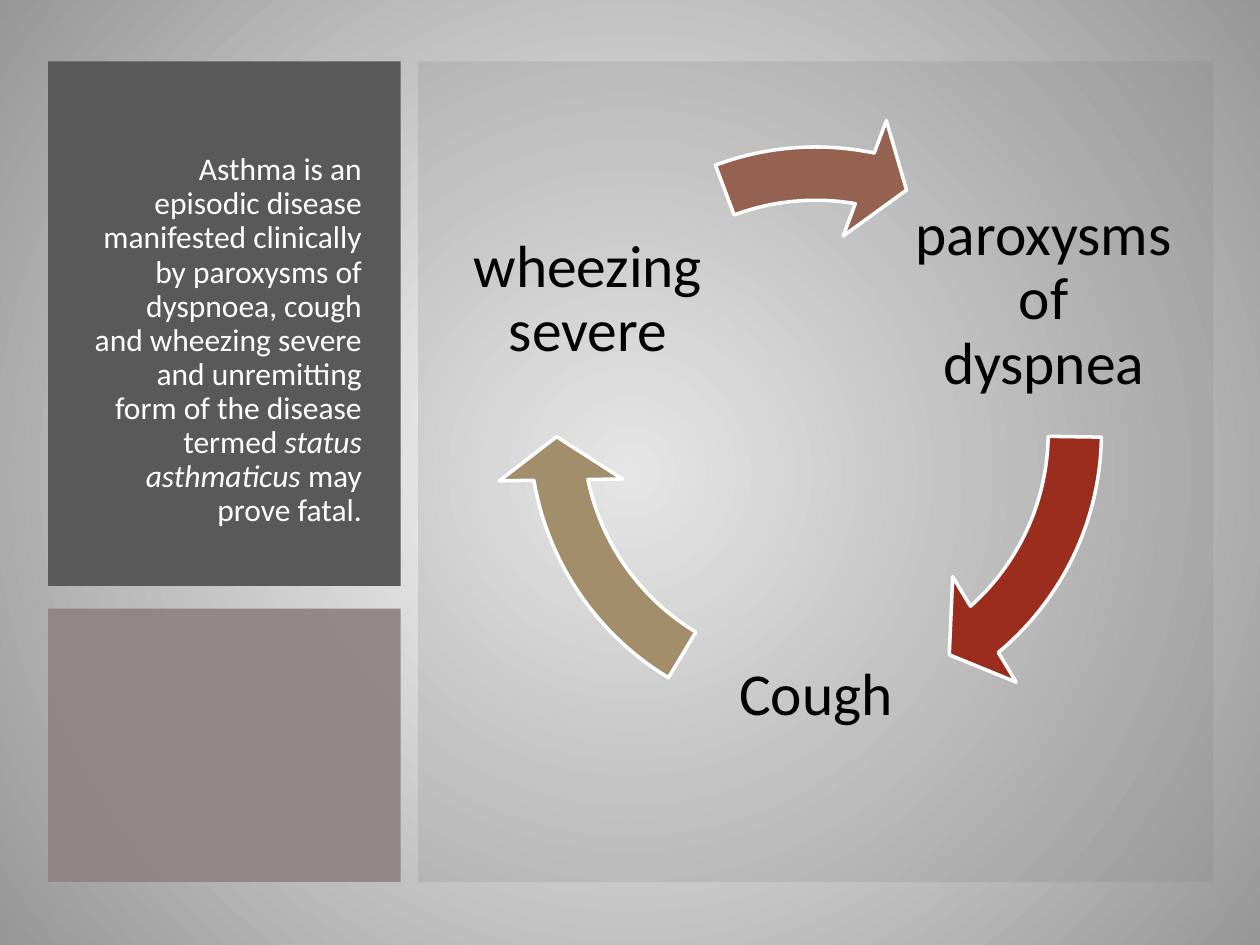
from dataclasses import dataclass

from lxml.etree import SubElement
from pptx import Presentation
from pptx.dml.color import RGBColor
from pptx.enum.shapes import MSO_SHAPE
from pptx.enum.text import MSO_ANCHOR, MSO_AUTO_SIZE, PP_ALIGN
from pptx.oxml import parse_xml
from pptx.oxml.ns import nsdecls, qn
from pptx.util import Cm, Pt


@dataclass(frozen=True)
class Theme:
    """Colours, font and type sizes of the slide."""

    font: str = "Calibri"
    white: str = "FFFFFF"
    black: str = "000000"
    edge: str = "979797"
    dark: str = "595959"
    mauve: str = "918485"
    gray: str = "808080"
    red: str = "9B2D1F"
    tan: str = "A28E6A"
    brown: str = "956251"
    title: int = 18
    label: int = 34


class Deck:
    """Holds the theme and the current slide and draws on it."""

    def __init__(self, theme):
        """Start a deck with one title-only slide."""
        self.theme = theme
        self.show = Presentation()
        self.show.slide_width, self.show.slide_height = Cm(25.4), Cm(19.05)
        self.slide = self.show.slides.add_slide(self.show.slide_layouts[5])

    def glow(self, inner, outer):
        """Fill the background with a round gradient."""
        fill = self.slide.background.fill
        fill.gradient()
        for stop, tint, place in zip(fill.gradient_stops, (inner, outer), (0, 1)):
            stop.color.rgb = RGBColor.from_string(tint)
            stop.position = place
        grad = self.slide.element.find(".//" + qn("a:gradFill"))
        grad.replace(grad.find(qn("a:lin")), parse_xml(
            f'<a:path {nsdecls("a")} path="circle">'
            '<a:fillToRect l="50000" t="50000" r="50000" b="50000"/></a:path>'))

    def style(self, font, size, tint):
        """Set face, size and colour of a font."""
        font.name, font.size = self.theme.font, Pt(size)
        font.color.rgb = RGBColor.from_string(tint)

    def paint(self, shape, tint):
        """Give a shape a flat fill and no shadow."""
        shape.shadow.inherit = False
        shape.fill.solid()
        shape.fill.fore_color.rgb = RGBColor.from_string(tint)

    def panel(self, box, tint, alpha=100):
        """Draw a borderless rectangle."""
        shape = self.slide.shapes.add_shape(MSO_SHAPE.RECTANGLE, *map(Cm, box))
        self.paint(shape, tint)
        shape.line.fill.background()
        if alpha < 100:
            color = shape.element.spPr.find(".//" + qn("a:srgbClr"))
            SubElement(color, qn("a:alpha"), val=str(alpha * 1000))

    def title(self, box, parts):
        """Place the title above the panels, from text and italic pairs."""
        shape = self.slide.shapes.title
        self.slide.shapes.element.append(shape.element)
        shape.left, shape.top, shape.width, shape.height = map(Cm, box)
        frame = shape.text_frame
        frame.word_wrap, frame.auto_size = True, MSO_AUTO_SIZE.NONE
        frame.vertical_anchor, frame.margin_top = MSO_ANCHOR.MIDDLE, Cm(0.82)
        para = frame.paragraphs[0]
        para.alignment, para.line_spacing = PP_ALIGN.RIGHT, 0.9
        for text, slant in parts:
            run = para.add_run()
            run.text, run.font.italic = text, slant
            self.style(run.font, self.theme.title, self.theme.white)

    def label(self, group, left, top, side, text):
        """Write a centred label in a square."""
        box = group.shapes.add_textbox(Cm(left), Cm(top), Cm(side), Cm(side))
        frame = box.text_frame
        frame.word_wrap, frame.vertical_anchor = True, MSO_ANCHOR.MIDDLE
        frame.margin_left = frame.margin_right = Cm(0.13)
        frame.margin_top = frame.margin_bottom = Cm(0.13)
        para = frame.paragraphs[0]
        para.text, para.alignment, para.line_spacing = text, PP_ALIGN.CENTER, 0.9
        self.style(para.font, self.theme.label, self.theme.black)

    def arrow(self, group, box, tint, tip, tail):
        """Draw a curved arrow along the ring."""
        shape = group.shapes.add_shape(MSO_SHAPE.CIRCULAR_ARROW, *map(Cm, box))
        for spot, value in enumerate((0.083, 5.764, tip, tail, 0.096)):
            shape.adjustments[spot] = value
        self.paint(shape, tint)
        shape.line.color.rgb = RGBColor.from_string(self.theme.white)
        shape.line.width = Pt(2)

    def cycle(self, ring, side, steps):
        """Group the labels and arrows of a cycle."""
        group = self.slide.shapes.add_group_shape()
        for text, left, top, tint, tip, tail in steps:
            self.label(group, left, top, side, text)
            self.arrow(group, ring, tint, tip, tail)


def main():
    """Build and save the slide."""
    theme = Theme()
    deck = Deck(theme)
    deck.glow(theme.white, theme.edge)
    deck.panel((0.97, 1.24, 7.11, 10.57), theme.dark)
    deck.panel((0.97, 12.27, 7.11, 5.51), theme.mauve, 95)
    deck.panel((8.43, 1.24, 16.03, 16.54), theme.gray, 20)
    deck.title((1.63, 2.03, 5.92, 8.99), (
        ("Asthma is an episodic disease manifested clinically by paroxysms of "
         "dyspnoea, cough and wheezing severe and unremitting form of the "
         "disease termed ", False),
        ("status asthmaticus ", True),
        ("may prove fatal.", False)))
    deck.cycle((9.98, 2.26, 12.93, 12.93), 5.46, (
        ("paroxysms of dyspnea", 18.31, 3.33, theme.red, 29.62, 0.53),
        ("Cough", 13.72, 11.3, theme.tan, 101.71, 72.61),
        ("wheezing severe", 9.12, 3.33, theme.brown, 168.55, 149.68)))
    deck.show.save("out.pptx")


if __name__ == "__main__":
    main()
